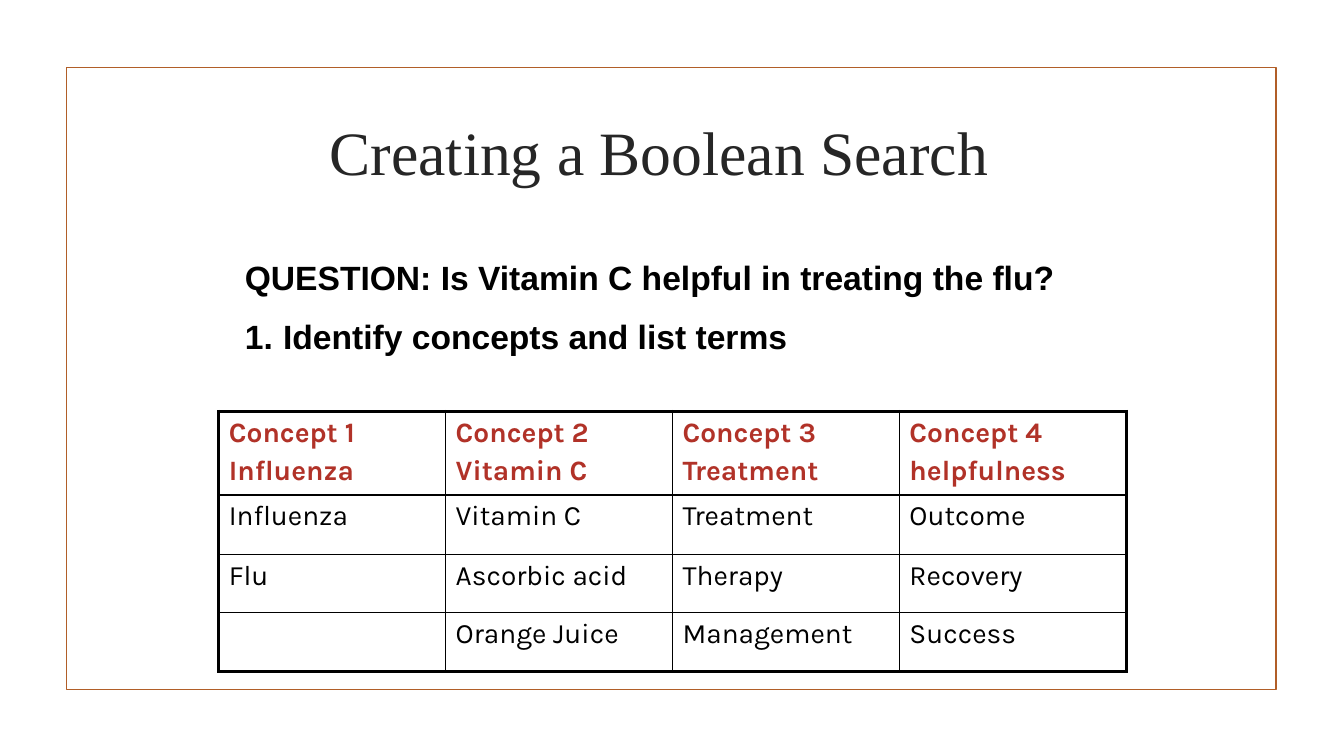
from dataclasses import dataclass

from lxml.etree import SubElement
from pptx import Presentation
from pptx.dml.color import RGBColor
from pptx.enum.shapes import MSO_SHAPE
from pptx.enum.text import MSO_ANCHOR, PP_ALIGN
from pptx.oxml.ns import qn
from pptx.util import Emu, Pt

EMU_PER_PX = 9144  # 100 px to the inch
COLORS = {"frame": "B15E28", "title": "262626", "concept": "B13228", "ink": "000000"}
OUTER_RULE, INNER_RULE = 2.25, 1


@dataclass(frozen=True)
class Box:
    left: int
    top: int
    width: int
    height: int

    def emu(self) -> tuple[Emu, ...]:
        return tuple(px(n) for n in (self.left, self.top, self.width, self.height))


@dataclass(frozen=True)
class TextStyle:
    font: str
    size: int
    color: str
    bold: bool = False


@dataclass(frozen=True)
class Concept:
    heading: tuple[str, str]
    terms: tuple[str, ...]


TITLE = TextStyle("Times New Roman", 44, "title")
QUESTION = TextStyle("Arial", 24, "ink", True)
HEADING = TextStyle("Karla", 20, "concept", True)
TERM = TextStyle("Karla", 20, "ink")

CONCEPTS = (
    Concept(("Concept 1", "Influenza"), ("Influenza", "Flu", "")),
    Concept(("Concept 2", "Vitamin C"), ("Vitamin C", "Ascorbic acid", "Orange Juice")),
    Concept(("Concept 3", "Treatment"), ("Treatment", "Therapy", "Management")),
    Concept(("Concept 4", "helpfulness"), ("Outcome", "Recovery", "Success")),
)
ROW_HEIGHTS = (83, 59, 58, 58)
COLUMN_WIDTH = 225


def px(length: int) -> Emu:
    return Emu(length * EMU_PER_PX)


def color(name: str) -> RGBColor:
    return RGBColor.from_string(COLORS[name])


def write(frame, lines: tuple[str, ...], style: TextStyle, gap: int = 0) -> None:
    """Write one paragraph a line, with gap points between paragraphs."""
    for index, line in enumerate(lines):
        paragraph = frame.add_paragraph() if index else frame.paragraphs[0]
        if index:
            paragraph.space_before = Pt(gap)
        if line:
            run = paragraph.add_run()
            run.text = line
            run.font.name = style.font
            run.font.size = Pt(style.size)
            run.font.bold = style.bold
            run.font.color.rgb = color(style.color)


def add_text_frame(slide, box: Box):
    frame = slide.shapes.add_textbox(*box.emu()).text_frame
    frame.word_wrap = True
    return frame


def add_frame(slide, box: Box) -> None:
    outline = slide.shapes.add_shape(MSO_SHAPE.RECTANGLE, *box.emu())
    outline.shadow.inherit = False
    outline.fill.background()
    outline.line.color.rgb = color("frame")
    outline.line.width = Pt(1.25)


def add_title(slide, box: Box) -> None:
    frame = add_text_frame(slide, box)
    frame.vertical_anchor = MSO_ANCHOR.MIDDLE
    write(frame, ("Creating a Boolean Search",), TITLE)
    frame.paragraphs[0].alignment = PP_ALIGN.CENTER


def add_question(slide, box: Box) -> None:
    frame = add_text_frame(slide, box)
    lines = ("QUESTION: Is Vitamin C helpful in treating the flu?",
             "Identify concepts and list terms")
    write(frame, lines, QUESTION, gap=13)
    hang = px(38)
    for paragraph in frame.paragraphs:
        properties = paragraph._p.get_or_add_pPr()
        properties.set("marL", str(hang))
        properties.set("indent", str(-hang))
    SubElement(properties, qn("a:buFont"), typeface="+mj-lt")
    SubElement(properties, qn("a:buAutoNum"), type="arabicPeriod")


def rule_cell(cell, outer_sides: dict[str, bool]) -> None:
    """Draw the four borders of a cell, heavier on the table's outer sides."""
    properties = cell._tc.get_or_add_tcPr()
    for side, is_outer in outer_sides.items():
        width = Pt(OUTER_RULE if is_outer else INNER_RULE)
        border = SubElement(properties, qn(f"a:ln{side}"), w=str(width))
        fill = SubElement(border, qn("a:solidFill"))
        SubElement(fill, qn("a:srgbClr"), val=COLORS["ink"])


def add_concept_table(slide, box: Box) -> None:
    last_row, last_column = len(ROW_HEIGHTS) - 1, len(CONCEPTS) - 1
    table = slide.shapes.add_table(last_row + 1, last_column + 1, *box.emu()).table
    table.first_row = table.horz_banding = False
    for row, height in zip(table.rows, ROW_HEIGHTS):
        row.height = px(height)
    for c, concept in enumerate(CONCEPTS):
        table.columns[c].width = px(COLUMN_WIDTH)
        for r, lines in enumerate((concept.heading, *((term,) for term in concept.terms))):
            cell = table.cell(r, c)
            write(cell.text_frame, lines, TERM if r else HEADING, gap=4)
            rule_cell(cell, {"L": c == 0, "R": c == last_column,
                             "T": r == 0, "B": r == last_row})
            cell.fill.background()


def main() -> None:
    deck = Presentation()
    deck.slide_width, deck.slide_height = px(1333), px(750)
    slide = deck.slides.add_slide(deck.slide_layouts[6])
    add_frame(slide, Box(66, 67, 1200, 617))
    add_title(slide, Box(54, 87, 1200, 125))
    add_concept_table(slide, Box(217, 408, COLUMN_WIDTH * len(CONCEPTS), sum(ROW_HEIGHTS)))
    add_question(slide, Box(233, 250, 842, 111))
    deck.save("out.pptx")


if __name__ == "__main__":
    main()
